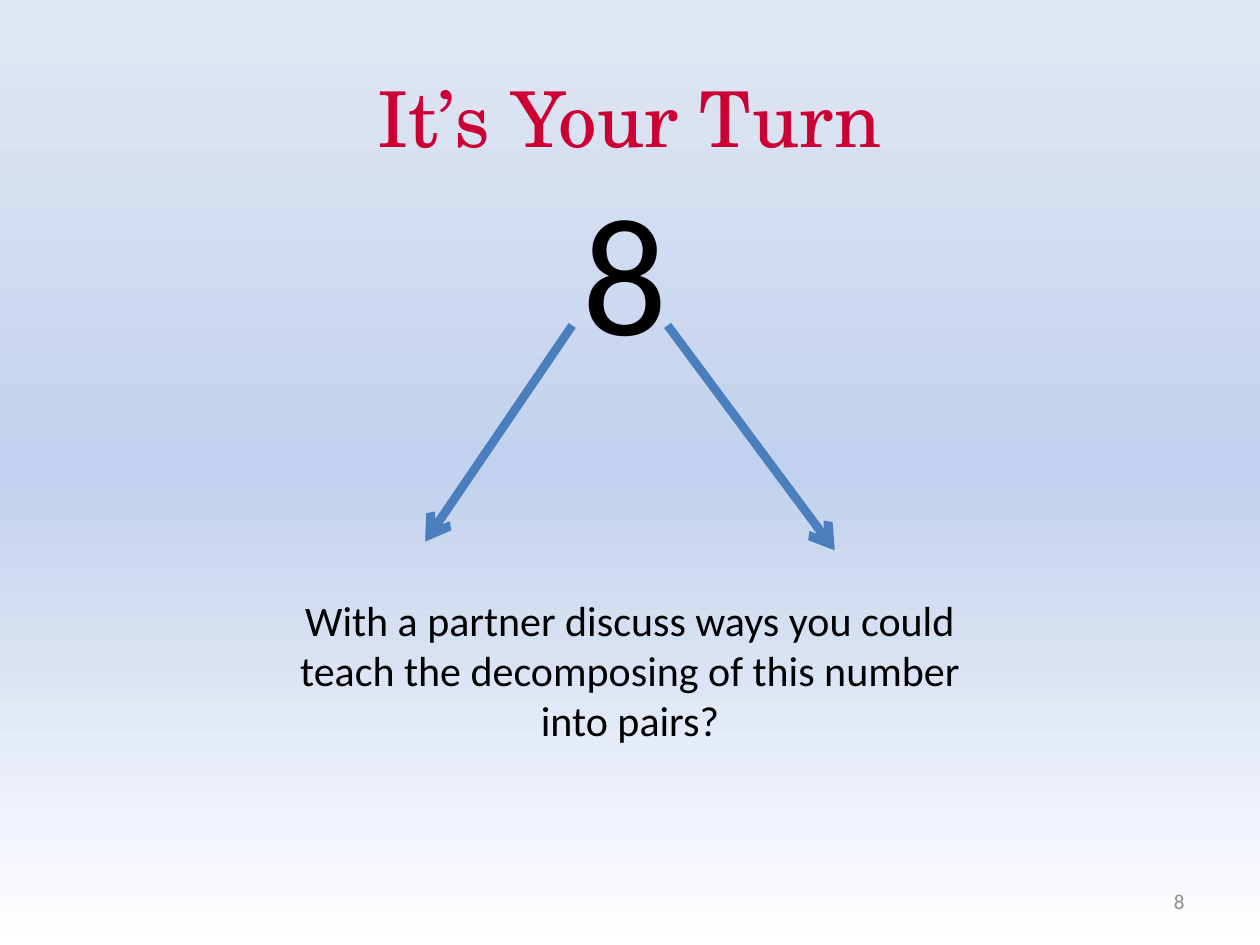
from copy import deepcopy
from dataclasses import dataclass

from pptx import Presentation
from pptx.dml.color import RGBColor
from pptx.enum.shapes import MSO_CONNECTOR
from pptx.enum.text import MSO_ANCHOR, PP_ALIGN
from pptx.oxml.ns import qn
from pptx.util import Pt
from lxml.etree import SubElement


@dataclass
class Label:
    text: str
    left: float
    top: float
    width: float
    height: float
    size: float
    color: str = "000000"
    font: str = "Calibri"
    align: PP_ALIGN = PP_ALIGN.CENTER
    anchor: MSO_ANCHOR = MSO_ANCHOR.TOP


@dataclass
class Arrow:
    x1: float
    y1: float
    x2: float
    y2: float


GRADIENT = [(0, "FFFFFF"), (0.5, "C2D1ED"), (1, "E1E8F5")]
ARROW_COLOR = "4B7EBC"

LABELS = [
    Label("8", 516, 500.5, 168, 28.75, 12, "8C8C8C",
          align=PP_ALIGN.RIGHT, anchor=MSO_ANCHOR.MIDDLE),
    Label("8", 315, 92, 84, 124, 96),
    Label("With a partner discuss ways you could teach the decomposing "
          "of this number into pairs?", 156, 336, 408, 94.5, 24),
    Label("It’s Your Turn", 36, 21.5, 648, 90, 44, "CC0033",
          "TeX Gyre Schola", anchor=MSO_ANCHOR.MIDDLE),
]

ARROWS = [Arrow(327, 186, 243, 309.5), Arrow(381.5, 186, 477, 314.5)]


def rgb(value: str) -> RGBColor:
    return RGBColor.from_string(value)


def paint_background(s) -> None:
    fill = s.background.fill
    fill.gradient()
    fill.gradient_angle = 90
    stops = next(s.element.iter(qn("a:gsLst")))
    stops.insert(1, deepcopy(stops[0]))
    for stop, (position, color) in zip(fill.gradient_stops, GRADIENT):
        stop.position = position
        stop.color.rgb = rgb(color)


def add_label(s, label: Label) -> None:
    sp = s.shapes.add_textbox(Pt(label.left), Pt(label.top),
                              Pt(label.width), Pt(label.height))
    tf = sp.text_frame
    tf.word_wrap = True
    tf.vertical_anchor = label.anchor
    p = tf.paragraphs[0]
    p.alignment = label.align
    r = p.add_run()
    r.text = label.text
    for name, value in {"size": Pt(label.size), "name": label.font}.items():
        setattr(r.font, name, value)
    r.font.color.rgb = rgb(label.color)


def add_arrow(s, arrow: Arrow) -> None:
    sp = s.shapes.add_connector(MSO_CONNECTOR.STRAIGHT, Pt(arrow.x1), Pt(arrow.y1),
                                Pt(arrow.x2), Pt(arrow.y2))
    sp.line.width = Pt(5)
    sp.line.color.rgb = rgb(ARROW_COLOR)
    SubElement(sp.line._get_or_add_ln(), qn("a:tailEnd"), type="arrow")
    SubElement(sp._element.spPr, qn("a:effectLst"))


def main() -> None:
    prs = Presentation()
    prs.slide_width, prs.slide_height = Pt(720), Pt(540)
    s = prs.slides.add_slide(prs.slide_layouts[6])
    paint_background(s)
    for label in LABELS:
        add_label(s, label)
    for arrow in ARROWS:
        add_arrow(s, arrow)
    prs.save("out.pptx")


if __name__ == "__main__":
    main()
